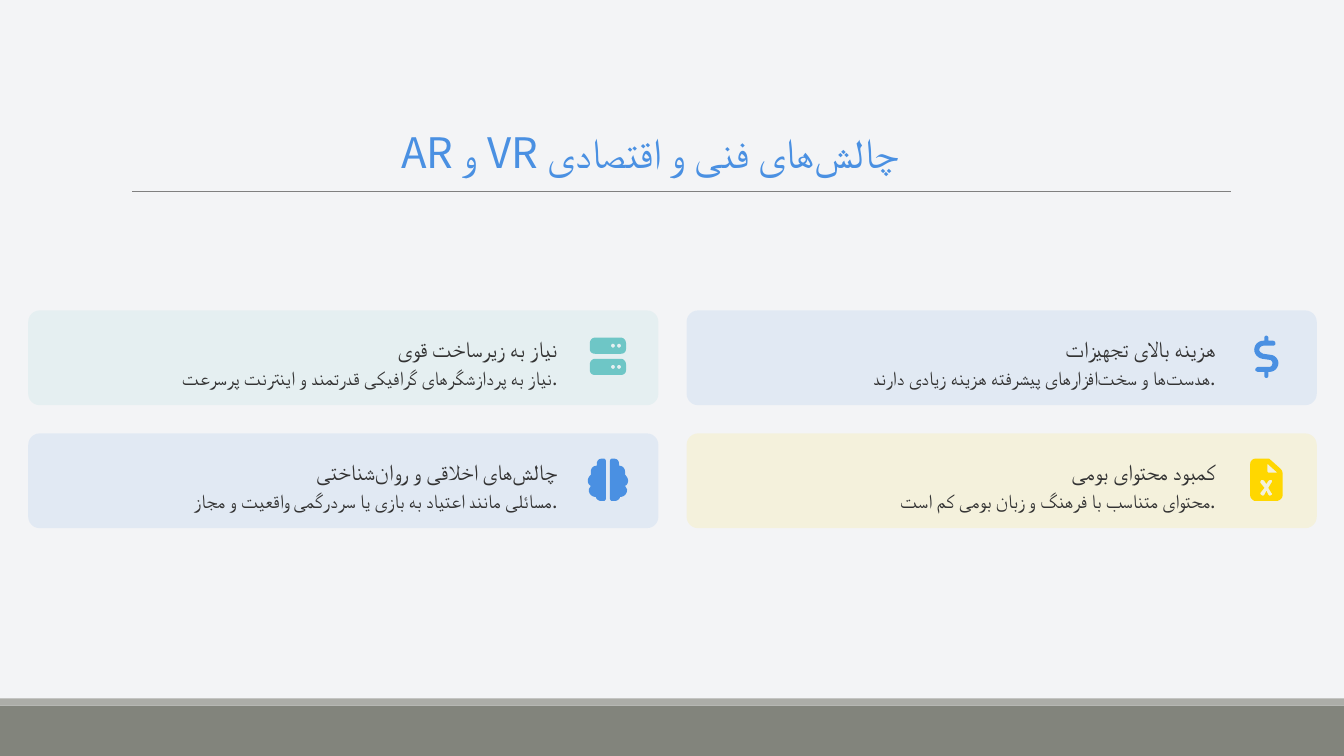
import lxml.etree
import pptx
import pptx.dml.color
import pptx.enum.shapes
import pptx.enum.text
import pptx.oxml.ns
import pptx.util

Inches = pptx.util.Inches
ALIGN = pptx.enum.text.PP_ALIGN
SHAPES = pptx.enum.shapes.MSO_SHAPE
FONT = "Noto Sans CJK SC"
JOIN = chr(0x200C)
BLUE, TEAL, YELLOW, INK = "4A90E2", "6EC6C6", "FFD700", "333333"
CURVE_STEPS = 6

DOLLAR = (
    "M -2 2 C -2 1 -1 0 0 0 C 1 0 2 1 2 2 L 2 5 L 6 5 C 8 5 9 6 9 8 C 9 9 8 10 6 10 "
    "L -3 10 C -5 10 -7 12 -7 14 C -7 16 -5 17 -3 18 L 4 19 C 8 19 12 23 12 27 "
    "C 12 32 8 36 3 36 L 2 36 L 2 40 C 2 41 1 42 0 42 C -1 42 -2 41 -2 40 L -2 36 "
    "L -8 36 C -9 36 -11 35 -11 34 C -11 32 -9 31 -8 31 L 3 31 C 5 31 6 29 6 27 "
    "C 6 26 5 24 3 24 L -4 23 C -9 22 -12 18 -12 14 C -12 9 -8 5 -3 5 L -2 5"
)
SERVER_UNIT = (
    "M -13 2 C -16 2 -18 5 -18 8 L -18 13 C -18 16 -16 18 -13 18 L 13 18 "
    "C 16 18 18 16 18 13 L 18 8 C 18 5 16 2 13 2"
)
SERVER_LIGHT = "M 5 8 C 6 8 7 9 7 10 C 7 11 6 12 5 12 C 4 12 3 11 3 10 C 3 9 4 8 5 8"
SHEET = (
    "M -16 5 C -16 2 -13 0 -11 0 L 2 0 C 3 0 4 1 5 2 L 14 10 C 15 11 16 13 16 14 "
    "L 16 37 C 16 39 13 42 10 42 L -11 42 C -13 42 -16 39 -16 37"
)
SHEET_FOLD = "M 1 5 L 1 12 C 1 14 2 14 3 14 L 11 14"
SHEET_CROSS = (
    "M -2 22 C -3 21 -4 21 -5 21 C -6 22 -6 23 -6 24 L -2 29 L -6 34 C -6 34 -6 36 -5 36 "
    "C -4 37 -3 37 -2 36 L 0 32 L 2 36 C 3 37 4 37 5 36 C 6 36 6 34 5 34 L 2 29 L 5 24 "
    "C 6 23 6 22 5 21 C 4 21 3 21 2 22 L 0 25"
)
BRAIN_HALF = (
    "M -11 5 C -11 2 -9 0 -6 0 L -4 0 C -3 0 -2 1 -2 3 L -2 39 C -2 41 -3 42 -4 42 "
    "L -7 42 C -9 42 -12 40 -12 38 C -16 38 -19 35 -19 31 C -19 30 -18 29 -17 27 "
    "C -19 26 -20 24 -20 22 C -20 20 -19 18 -17 16 C -17 15 -17 14 -17 13 "
    "C -17 10 -15 7 -11 7"
)


def color(value):
    """Return the colour for a hex string."""
    return pptx.dml.color.RGBColor.from_string(value)


def trace(outline, shift_x=0, shift_y=0, flip=1):
    """Turn an outline in hundredths of an inch into a list of points."""
    tokens = iter(outline.split())
    points = []
    for command in tokens:
        count = 3 if command == "C" else 1
        ends = [(float(next(tokens)), float(next(tokens))) for _ in range(count)]
        if command == "C":
            corners = [points[-1]] + ends
            for step in range(1, CURVE_STEPS + 1):
                t = step / CURVE_STEPS
                weights = ((1 - t) ** 3, 3 * t * (1 - t) ** 2, 3 * t * t * (1 - t), t ** 3)
                points.append(tuple(
                    sum(weight * corner[axis] for weight, corner in zip(weights, corners))
                    for axis in (0, 1)))
        else:
            points += ends
    return [(flip * x + shift_x, y + shift_y) for x, y in points]


def paint(shape, fill, opacity=None):
    """Give a shape a flat fill without line or shadow."""
    shape.shadow.inherit = False
    shape.line.fill.background()
    shape.fill.solid()
    shape.fill.fore_color.rgb = color(fill)
    if opacity is not None:
        qn = pptx.oxml.ns.qn
        fill_color = shape._element.spPr.find(qn("a:solidFill")).find(qn("a:srgbClr"))
        lxml.etree.SubElement(fill_color, qn("a:alpha"), val=str(opacity * 1000))


def add_box(slide, kind, left, top, width, height, fill, opacity=None):
    """Add a filled preset shape."""
    shape = slide.shapes.add_shape(
        kind, Inches(left), Inches(top), Inches(width), Inches(height))
    paint(shape, fill, opacity)
    return shape


def add_icon(slide, contours, center, top, fill):
    """Add one freeform made of closed contours."""
    scaled = [[(Inches(x / 100), Inches(y / 100)) for x, y in points] for points in contours]
    builder = slide.shapes.build_freeform(*scaled[0][0], scale=1.0)
    for number, points in enumerate(scaled):
        if number:
            builder.move_to(*points[0])
        builder.add_line_segments(points[1:], close=True)
    paint(builder.convert_to_shape(Inches(center), Inches(top)), fill)


def add_rule(slide, left, right, top, line_color, width):
    """Add a thin horizontal line."""
    rule = slide.shapes.add_connector(
        pptx.enum.shapes.MSO_CONNECTOR.STRAIGHT,
        Inches(left), Inches(top), Inches(right), Inches(top))
    rule.line.color.rgb = color(line_color)
    rule.line.width = pptx.util.Pt(width)
    lxml.etree.SubElement(rule._element.spPr, pptx.oxml.ns.qn("a:effectLst"))


def write(shape, text, size, text_color, alignment, spacing=1.0):
    """Write one formatted paragraph into a shape."""
    frame = shape.text_frame
    frame_format = {
        "margin_left": 0, "margin_right": 0, "margin_top": 0, "margin_bottom": 0,
        "word_wrap": True, "auto_size": pptx.enum.text.MSO_AUTO_SIZE.NONE,
        "vertical_anchor": pptx.enum.text.MSO_ANCHOR.MIDDLE,
    }
    for name, value in frame_format.items():
        setattr(frame, name, value)
    paragraph = frame.paragraphs[0]
    paragraph.alignment = alignment
    paragraph.line_spacing = spacing
    run = paragraph.add_run()
    run.text = text
    for name, value in {"name": FONT, "size": pptx.util.Pt(size)}.items():
        setattr(run.font, name, value)
    run.font.color.rgb = color(text_color)
    for script in ("a:ea", "a:cs"):
        lxml.etree.SubElement(run.font._element, pptx.oxml.ns.qn(script), typeface=FONT)
    return paragraph


def add_title(slide, text):
    """Place and fill the title placeholder."""
    title = slide.shapes.title
    place = {"left": 0.06, "top": 1.26, "width": 12.78, "height": 0.5}
    for name, value in place.items():
        setattr(title, name, Inches(value))
    paragraph = write(title, text, 30, BLUE, ALIGN.CENTER)
    paragraph._element.get_or_add_pPr().set("rtl", "1")


def add_card(slide, left, top, fill, contours, heading, detail):
    """Add a tinted card with its icon, heading and detail."""
    card = add_box(slide, SHAPES.ROUNDED_RECTANGLE, left, top, 6.25, 0.94, fill, 10)
    card.adjustments[0] = 0.12
    add_icon(slide, contours, left + 5.75, top + 0.25, fill)
    lines = ((heading, 0.17, 0.33, 16, 1.3), (detail, 0.5, 0.28, 14, 1.2))
    for text, offset, height, size, spacing in lines:
        box = slide.shapes.add_textbox(
            Inches(left + 0.15), Inches(top + offset), Inches(5.1), Inches(height))
        write(box, text, size, INK, ALIGN.RIGHT, spacing)


def main():
    """Build the slide and save it."""
    presentation = pptx.Presentation()
    presentation.slide_width = Inches(13.33)
    presentation.slide_height = Inches(7.5)
    slide = presentation.slides.add_slide(presentation.slide_layouts[5])
    slide.background.fill.solid()
    slide.background.fill.fore_color.rgb = color("F3F4F6")

    add_box(slide, SHAPES.RECTANGLE, 0, 7, 13.33, 0.5, "82847C")
    add_box(slide, SHAPES.RECTANGLE, 0, 6.93, 13.33, 0.07, "ACADA8")
    add_rule(slide, 1.31, 12.21, 1.9, "808080", 0.5)
    add_title(slide, f"چالش{JOIN}های فنی و اقتصادی VR و AR")

    server = []
    for shift in (0, 21):
        server.append(trace(SERVER_UNIT, 0, shift))
        server += [trace(SERVER_LIGHT, across, shift) for across in (0, 6)]
    sheet = [trace(outline) for outline in (SHEET, SHEET_FOLD, SHEET_CROSS)]
    brain = [trace(BRAIN_HALF, flip=side) for side in (1, -1)]
    cards = (
        (BLUE, [trace(DOLLAR)], "هزینه بالای تجهیزات",
         f"هدست{JOIN}ها و سخت{JOIN}افزارهای پیشرفته هزینه زیادی دارند."),
        (TEAL, server, "نیاز به زیرساخت قوی",
         "نیاز به پردازشگرهای گرافیکی قدرتمند و اینترنت پرسرعت."),
        (YELLOW, sheet, "کمبود محتوای بومی",
         "محتوای متناسب با فرهنگ و زبان بومی کم است."),
        (BLUE, brain, f"چالش{JOIN}های اخلاقی و روان{JOIN}شناختی",
         "مسائلی مانند اعتیاد به بازی یا سردرگمی واقعیت و مجاز."),
    )
    for number, card in enumerate(cards):
        row, column = divmod(number, 2)
        add_card(slide, 6.81 - 6.53 * column, 3.08 + 1.22 * row, *card)
    presentation.save("out.pptx")


if __name__ == "__main__":
    main()
